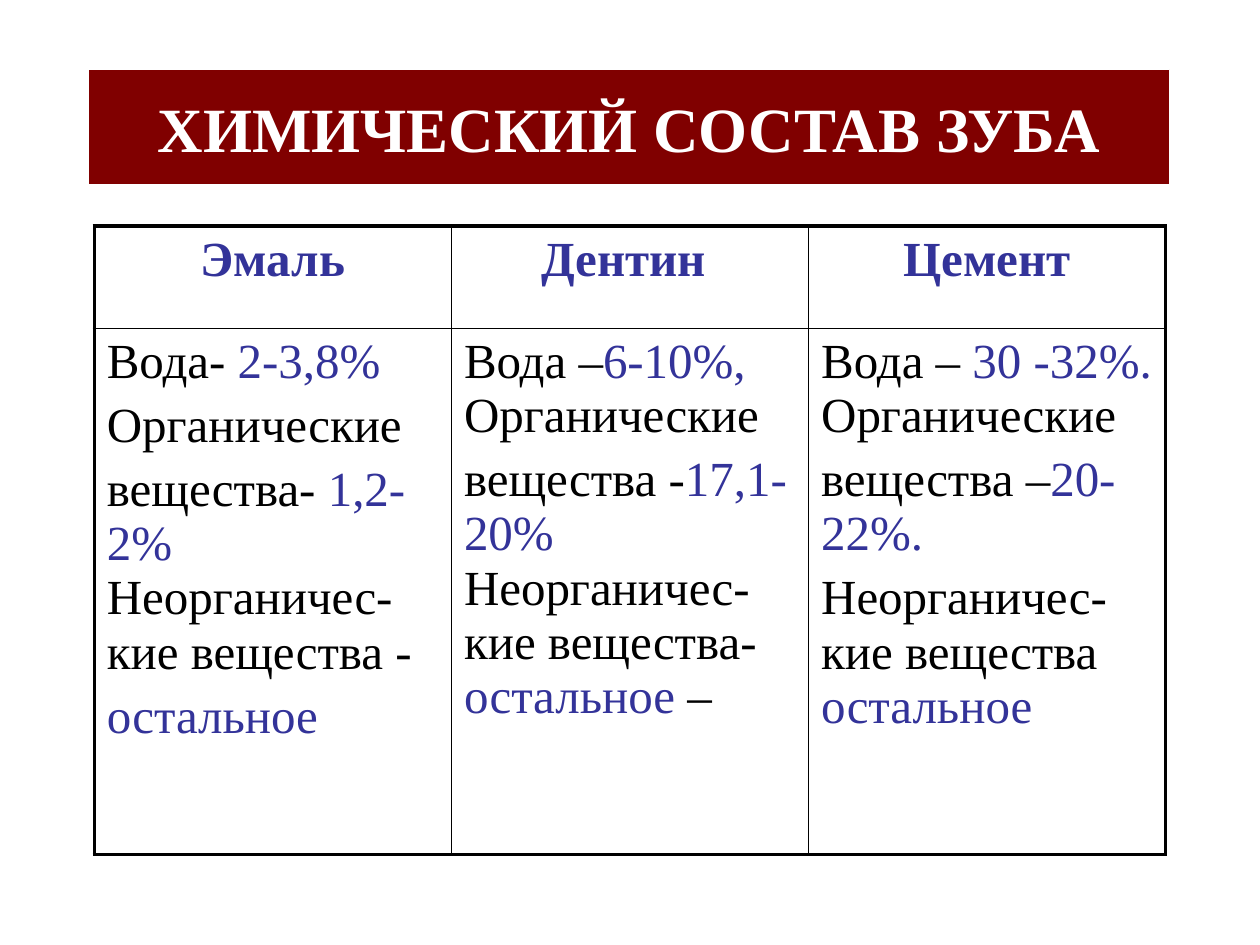
from dataclasses import dataclass

from lxml.etree import SubElement
from pptx import Presentation
from pptx.dml.color import RGBColor
from pptx.enum.text import MSO_ANCHOR, PP_ALIGN
from pptx.oxml.ns import qn
from pptx.util import Cm, Pt

FONT = "Times New Roman"
BLACK, BLUE, MAROON, WHITE = "000000", "333399", "800000", "FFFFFF"
THIN, THICK = Pt(1), Pt(2.25)


@dataclass
class Run:
    text: str
    color: str = BLACK


@dataclass
class Tissue:
    name: str
    paragraphs: list[list[Run]]


TISSUES = [
    Tissue("Эмаль", [
        [Run("Вода- "), Run("2-3,8%", BLUE)],
        [Run("Органические")],
        [Run("вещества- "), Run("1,2-2% ", BLUE), Run("Неорганичес-кие вещества -")],
        [Run("остальное", BLUE)],
    ]),
    Tissue("Дентин ", [
        [Run("Вода –"), Run("6-10%, ", BLUE), Run("Органические")],
        [Run("вещества -"), Run("17,1-20% ", BLUE), Run("Неорганичес-кие вещества-"),
         Run("остальное", BLUE), Run(" –")],
    ]),
    Tissue("Цемент", [
        [Run("Вода – "), Run("30 -32%. ", BLUE), Run("Органические")],
        [Run("вещества –"), Run("20-22%.", BLUE)],
        [Run("Неорганичес-кие вещества "), Run("остальное", BLUE)],
    ]),
]


def rgb(color: str) -> RGBColor:
    return RGBColor.from_string(color)


def add_text(paragraph, text: str, *, size: float = 28, color: str = BLACK,
             bold: bool = False) -> None:
    run = paragraph.add_run()
    run.text = text
    font = run.font
    font.name, font.size, font.bold = FONT, Pt(size), bold
    font.color.rgb = rgb(color)


def set_borders(cell, widths: dict[str, int]) -> None:
    """Draw black cell borders; widths are keyed L, R, T, B in that order."""
    properties = cell._tc.get_or_add_tcPr()
    for side, width in widths.items():
        line = SubElement(properties, qn(f"a:ln{side}"), w=str(width))
        fill = SubElement(line, qn("a:solidFill"))
        SubElement(fill, qn("a:srgbClr"), val=BLACK)


def add_title(slide, text: str) -> None:
    title = slide.shapes.title
    title.left, title.top, title.width, title.height = Cm(1.79), Cm(1.4), Cm(21.79), Cm(2.33)
    title.fill.solid()
    title.fill.fore_color.rgb = rgb(MAROON)
    title.line.color.rgb = rgb(WHITE)
    title.line.width = Pt(0.75)
    title.text_frame.vertical_anchor = MSO_ANCHOR.MIDDLE
    paragraph = title.text_frame.paragraphs[0]
    paragraph.alignment = PP_ALIGN.CENTER
    add_text(paragraph, text, size=36, color=WHITE, bold=True)


def fill_body(cell, paragraphs: list[list[Run]]) -> None:
    frame = cell.text_frame
    for index, runs in enumerate(paragraphs):
        paragraph = frame.add_paragraph() if index else frame.paragraphs[0]
        if index:
            paragraph.space_before = Pt(5.6)
        for run in runs:
            add_text(paragraph, run.text, color=run.color)


def add_composition_table(slide, tissues: list[Tissue]) -> None:
    heights = [Cm(2.06), Cm(10.6)]
    column_width = Cm(7.2)
    last = len(tissues) - 1
    table = slide.shapes.add_table(2, len(tissues), Cm(1.9), Cm(4.56),
                                   column_width * len(tissues), sum(heights)).table
    table.first_row = table.horz_banding = False
    for row, height in zip(table.rows, heights):
        row.height = height
    for column, tissue in enumerate(tissues):
        table.columns[column].width = column_width
        header, body = table.cell(0, column), table.cell(1, column)
        left = THICK if column == 0 else THIN
        right = THICK if column == last else THIN
        set_borders(header, {"L": left, "R": right, "T": THICK, "B": THIN})
        set_borders(body, {"L": left, "R": right, "T": THIN, "B": THICK})
        for cell in (header, body):
            cell.fill.background()
        paragraph = header.text_frame.paragraphs[0]
        paragraph.alignment = PP_ALIGN.CENTER
        add_text(paragraph, tissue.name, color=BLUE, bold=True)
        fill_body(body, tissue.paragraphs)


def main() -> None:
    presentation = Presentation()
    presentation.slide_width, presentation.slide_height = Cm(25.4), Cm(19.05)
    title_only = presentation.slide_layouts[5]
    slide = presentation.slides.add_slide(title_only)
    add_title(slide, "ХИМИЧЕСКИЙ СОСТАВ ЗУБА")
    add_composition_table(slide, TISSUES)
    presentation.save("out.pptx")


if __name__ == "__main__":
    main()
